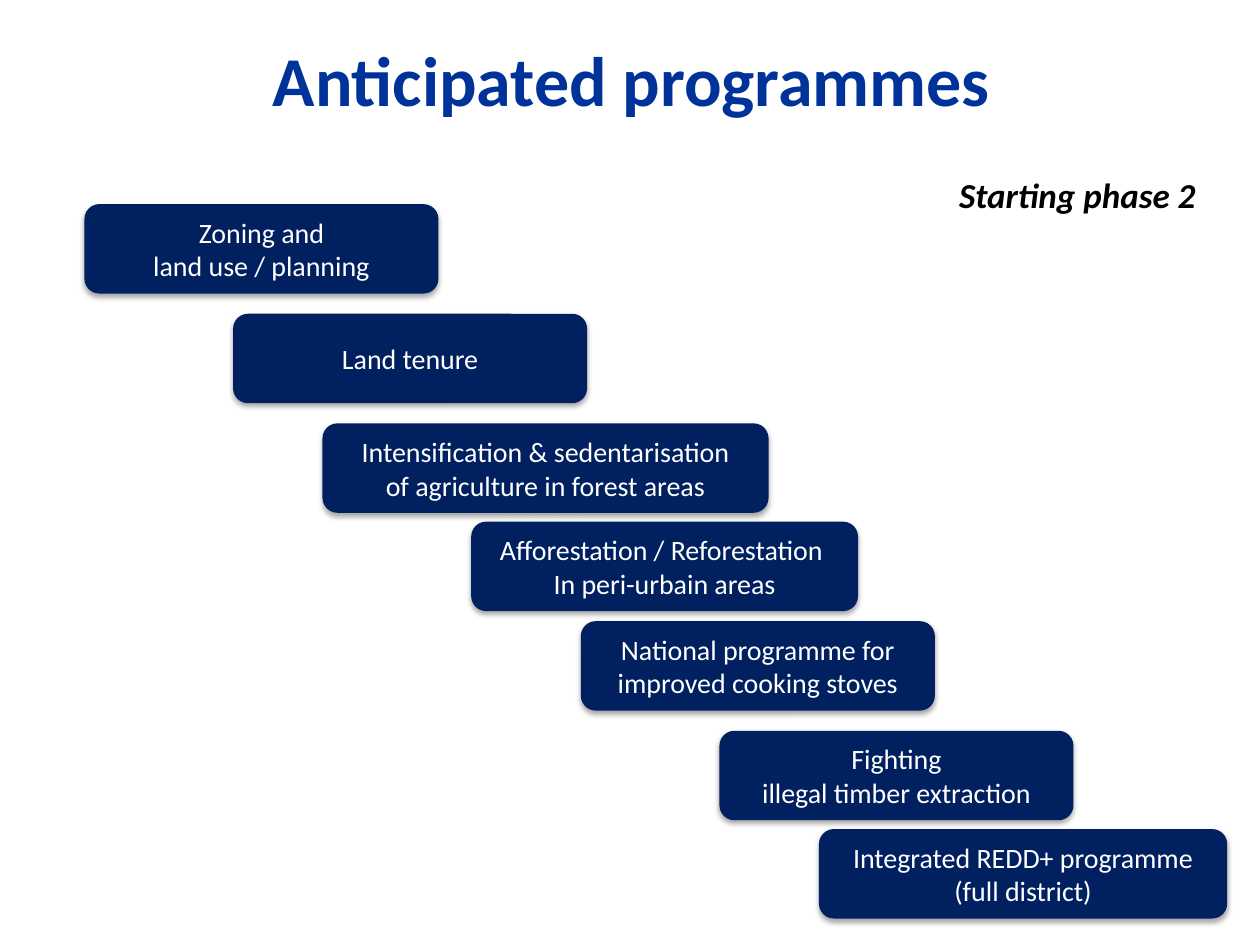
"""Build the slide of anticipated programmes as a staircase of boxes."""
from lxml.etree import SubElement
from pptx import Presentation
from pptx.dml.color import RGBColor
from pptx.enum.shapes import MSO_SHAPE
from pptx.enum.text import MSO_ANCHOR, MSO_AUTO_SIZE, PP_ALIGN
from pptx.oxml.ns import qn
from pptx.util import Inches, Pt

TITLE_BLUE = RGBColor(0x00, 0x33, 0x99)
NAVY = RGBColor(0x00, 0x20, 0x60)
WHITE = RGBColor(0xFF, 0xFF, 0xFF)
BLACK = RGBColor(0x00, 0x00, 0x00)

TITLE = "Anticipated programmes"
PHASE = "Starting phase 2"
BOX_HEIGHT = 0.71
PROGRAMMES = [
    (0.67, 1.62, 2.81, ["Zoning and", "land use / planning"]),
    (1.85, 2.49, 2.81, ["Land tenure"]),
    (2.56, 3.36, 3.54, ["Intensification & sedentarisation", "of agriculture in forest areas"]),
    (3.74, 4.14, 3.07, ["Afforestation / Reforestation ", "In peri-urbain areas"]),
    (4.61, 4.93, 2.81, ["National programme for", "improved cooking stoves"]),
    (5.71, 5.80, 2.81, ["Fighting", "illegal timber extraction"]),
    (6.50, 6.58, 3.24, ["Integrated REDD+ programme", "(full district)"]),
]

TITLE_FONT = {"name": "Calibri", "size": Pt(40), "bold": True}
BOX_FONT = {"name": "Calibri", "size": Pt(16)}
PHASE_FONT = {"name": "Calibri", "size": Pt(20), "bold": True, "italic": True}
BOX_FRAME = {
    "margin_left": 0, "margin_right": 0, "margin_top": 0, "margin_bottom": 0,
    "word_wrap": False, "vertical_anchor": MSO_ANCHOR.MIDDLE,
}
TITLE_FRAME = {"word_wrap": True, "vertical_anchor": MSO_ANCHOR.MIDDLE}
PHASE_FRAME = {"word_wrap": True, "auto_size": MSO_AUTO_SIZE.SHAPE_TO_FIT_TEXT}


def apply(target, values):
    """Set each named attribute on the target."""
    for name, value in values.items():
        setattr(target, name, value)


def write(tf, lines, frame, font, color):
    """Write centred lines with one format."""
    apply(tf, frame)
    for i, line in enumerate(lines):
        p = tf.add_paragraph() if i else tf.paragraphs[0]
        p.alignment = PP_ALIGN.CENTER
        r = p.add_run()
        r.text = line
        apply(r.font, font)
        r.font.color.rgb = color


def add_shadow(sp):
    """Give the shape a soft shadow straight below it."""
    sp.shadow.inherit = False
    effects = sp._element.spPr.find(qn("a:effectLst"))
    shadow = SubElement(effects, qn("a:outerShdw"), blurRad=str(Pt(3.1)),
                        dist=str(Pt(1.8)), dir="5400000", rotWithShape="0")
    color = SubElement(shadow, qn("a:srgbClr"), val=str(BLACK))
    SubElement(color, qn("a:alpha"), val="35000")


def add_programme(s, left, top, width, lines):
    """Add one programme box."""
    sp = s.shapes.add_shape(MSO_SHAPE.ROUNDED_RECTANGLE, Inches(left), Inches(top),
                            Inches(width), Inches(BOX_HEIGHT))
    sp.fill.solid()
    sp.fill.fore_color.rgb = NAVY
    sp.line.fill.background()
    add_shadow(sp)
    write(sp.text_frame, lines, BOX_FRAME, BOX_FONT, WHITE)


def main():
    """Build and save the slide."""
    prs = Presentation()
    prs.slide_width, prs.slide_height = Inches(10), Inches(7.5)
    s = prs.slides.add_slide(prs.slide_layouts[5])

    title = s.shapes.title
    apply(title, {"left": Inches(0.51), "top": 0, "width": Inches(9), "height": Inches(1.25)})
    write(title.text_frame, [TITLE], TITLE_FRAME, TITLE_FONT, TITLE_BLUE)

    for programme in PROGRAMMES:
        add_programme(s, *programme)

    phase = s.shapes.add_textbox(Inches(7.34), Inches(1.33), Inches(2.42), Inches(0.44))
    write(phase.text_frame, [PHASE], PHASE_FRAME, PHASE_FONT, BLACK)

    prs.save("out.pptx")


if __name__ == "__main__":
    main()
